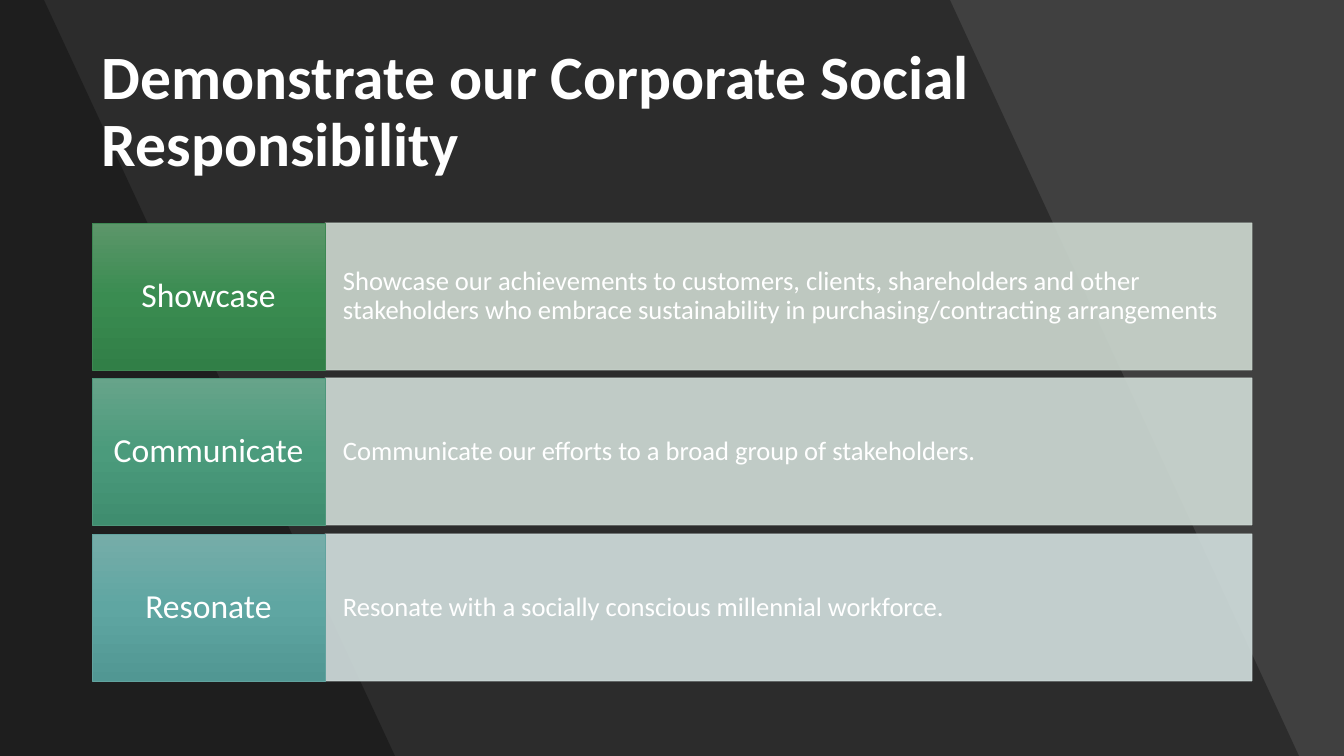
"""Build the corporate social responsibility slide."""
from dataclasses import dataclass

from lxml import etree
from pptx import Presentation
from pptx.dml.color import RGBColor
from pptx.enum.shapes import MSO_SHAPE
from pptx.enum.text import MSO_ANCHOR, PP_ALIGN
from pptx.oxml.ns import qn
from pptx.util import Emu, Pt

RECTANGLE = MSO_SHAPE.RECTANGLE
MIDDLE = MSO_ANCHOR.MIDDLE
LEFT, CENTER = PP_ALIGN.LEFT, PP_ALIGN.CENTER

SLIDE_W, SLIDE_H = 1344, 756
EMU_PER_PX = 12192000 / SLIDE_W


@dataclass(frozen=True)
class Theme:
    font: str = "Calibri"
    background: str = "404040"
    shade: str = "000000"
    text: str = "FFFFFF"
    title_size: int = 44
    label_size: int = 24
    detail_size: int = 19
    shade_alpha: int = 30
    panel_alpha: int = 90
    outline: float = 0.5
    line_spacing: float = 0.9


def px(length):
    return Emu(round(length * EMU_PER_PX))


def set_alpha(fill_element, percent):
    color = fill_element.find(".//" + qn("a:srgbClr"))
    etree.SubElement(color, qn("a:alpha"), val=str(percent * 1000))


class SlideBuilder:
    def __init__(self, slide, theme):
        self.slide = slide
        self.theme = theme
        self.paint(slide.background.fill, theme.background)

    def shade(self, points):
        start, *others = [(px(x), px(y)) for x, y in points]
        builder = self.slide.shapes.build_freeform(*start)
        builder.add_line_segments(others, close=True)
        shape = builder.convert_to_shape()
        shape.shadow.inherit = False
        shape.line.fill.background()
        self.paint(shape.fill, self.theme.shade)
        set_alpha(shape._element.spPr.find(qn("a:solidFill")), self.theme.shade_alpha)

    def title(self, box, text):
        shape = self.slide.shapes.add_textbox(*map(px, box))
        self.set_text(shape, text, self.theme.title_size, (10, 5), LEFT, bold=True)

    def panel(self, box, text, color):
        shape = self.rectangle(box, color)
        self.paint(shape.fill, color)
        properties = shape._element.spPr
        for fill in (properties.find(qn("a:solidFill")), properties.find(qn("a:ln"))):
            set_alpha(fill, self.theme.panel_alpha)
        self.set_text(shape, text, self.theme.detail_size, (18, 37), LEFT)

    def label(self, box, text, gradient, outline):
        shape = self.rectangle(box, outline)
        shape.fill.gradient()
        shape.fill.gradient_angle = 270
        stops = shape._element.spPr.find(".//" + qn("a:gsLst"))
        for stop in list(stops):
            stops.remove(stop)
        for index, color in enumerate(gradient):
            stop = etree.SubElement(stops, qn("a:gs"), pos=str(index * 50000))
            etree.SubElement(stop, qn("a:srgbClr"), val=color)
        self.set_text(shape, text, self.theme.label_size, (12, 14), CENTER)

    def rectangle(self, box, outline):
        shape = self.slide.shapes.add_shape(RECTANGLE, *map(px, box))
        shape.shadow.inherit = False
        self.paint(shape.line.fill, outline)
        shape.line.width = Pt(self.theme.outline)
        return shape

    def paint(self, fill, color):
        fill.solid()
        fill.fore_color.rgb = RGBColor.from_string(color)

    def set_text(self, shape, text, size, insets, align, bold=False):
        frame = shape.text_frame
        frame.word_wrap = True
        frame.vertical_anchor = MIDDLE
        frame.margin_left = frame.margin_right = px(insets[0])
        frame.margin_top = frame.margin_bottom = px(insets[1])
        paragraph = frame.paragraphs[0]
        paragraph.text = text
        paragraph.alignment = align
        paragraph.line_spacing = self.theme.line_spacing
        font = paragraph.font
        font.name = self.theme.font
        font.size = Pt(size)
        font.bold = bold
        font.color.rgb = RGBColor.from_string(self.theme.text)


SHADE_EDGES = [(950, 1299), (44, 395)]
TITLE = "Demonstrate our Corporate Social Responsibility"
ROWS_LEFT, ROWS_TOP, ROW_H = 92, 223, 147
LABEL_W, PANEL_W = 233, 927
TWO_ROW_PITCH = 311
ROWS = [
    ("Showcase",
     "Showcase our achievements to customers, clients, shareholders and other "
     "stakeholders who embrace sustainability in purchasing/contracting arrangements",
     "CEDAD1", ("5C966A", "3A8C51", "317F47"), "3E8853"),
    ("Communicate",
     "Communicate our efforts to a broad group of stakeholders.",
     "D1DDD7", ("67A48A", "4B9B7C", "3F8D6F"), "4E977B"),
    ("Resonate",
     "Resonate with a socially conscious millennial workforce.",
     "D3E0DF", ("76ADA9", "5FA6A2", "519793"), "62A39F"),
]


def main():
    presentation = Presentation()
    presentation.slide_width = px(SLIDE_W)
    presentation.slide_height = px(SLIDE_H)
    slide = presentation.slides.add_slide(presentation.slide_layouts[6])
    builder = SlideBuilder(slide, Theme())

    for top_x, bottom_x in SHADE_EDGES:
        builder.shade([(0, 0), (top_x, 0), (bottom_x, SLIDE_H), (0, SLIDE_H)])
    builder.title((92, 40, 1160, 146), TITLE)

    for index, (label, detail, panel_color, gradient, outline) in enumerate(ROWS):
        top = ROWS_TOP + index * TWO_ROW_PITCH // 2
        builder.panel((ROWS_LEFT + LABEL_W, top, PANEL_W, ROW_H), detail, panel_color)
        builder.label((ROWS_LEFT, top, LABEL_W, ROW_H), label, gradient, outline)

    presentation.save("out.pptx")


if __name__ == "__main__":
    main()
